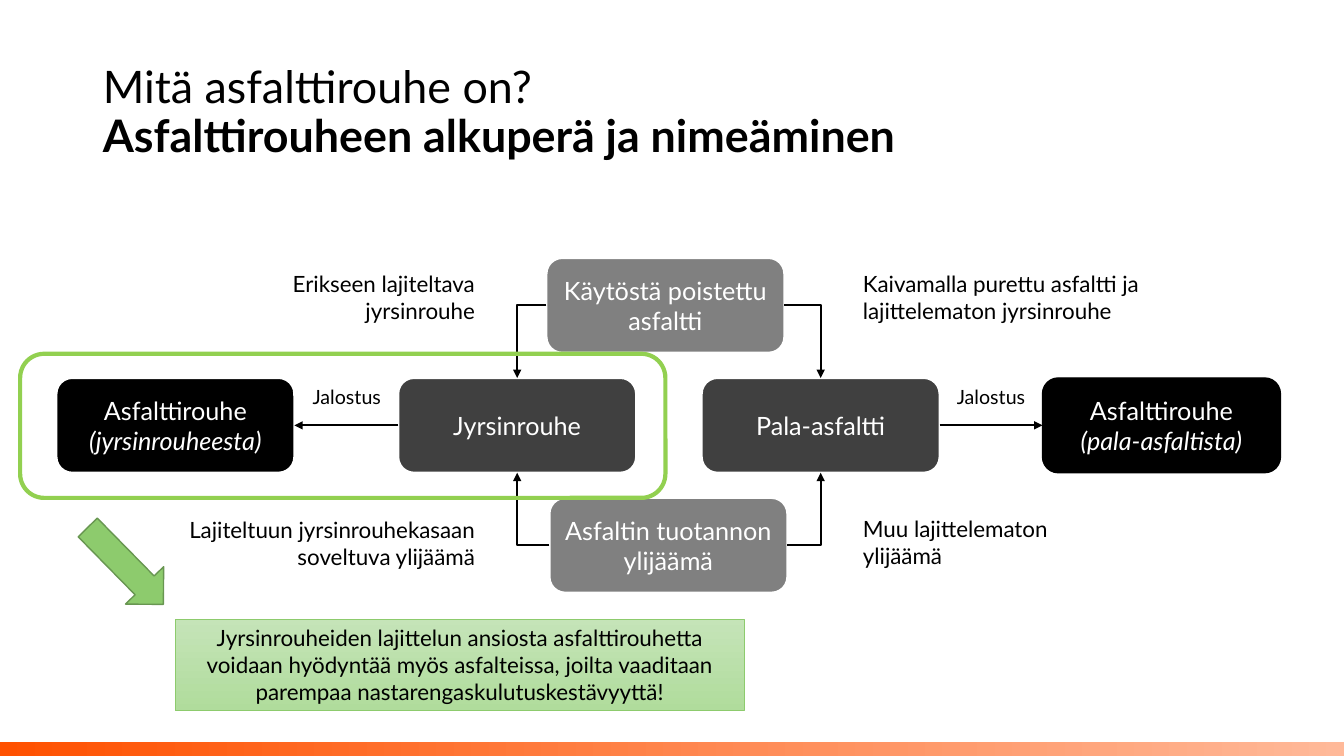
from lxml.etree import SubElement
from pptx import Presentation
from pptx.dml.color import RGBColor
from pptx.enum.shapes import MSO_CONNECTOR, MSO_SHAPE
from pptx.enum.text import MSO_ANCHOR, MSO_AUTO_SIZE, PP_ALIGN
from pptx.oxml.ns import qn
from pptx.util import Inches, Pt

FONT = "Lato"
BLACK, WHITE, DARK, GRAY = "000000", "FFFFFF", "404040", "808080"
BOX_W, BOX_H = 2.36, 0.94
MIDDLE_TOP = 3.75
MIDDLE_Y = MIDDLE_TOP + BOX_H / 2


def color(hex_value):
    return RGBColor.from_string(hex_value)


def write(frame, lines, size, text_color=BLACK, align=PP_ALIGN.LEFT):
    frame.word_wrap = True
    frame.text = "\n".join(lines)
    for paragraph in frame.paragraphs:
        paragraph.alignment = align
        paragraph.font.size = Pt(size)
        paragraph.font.name = FONT
        paragraph.font.color.rgb = color(text_color)


def add_shape(slide, kind, area, fill=None, line=None, width=1.5):
    shape = slide.shapes.add_shape(kind, *map(Inches, area))
    shape.shadow.inherit = False
    if fill is None:
        shape.fill.background()
    elif isinstance(fill, str):
        shape.fill.solid()
        shape.fill.fore_color.rgb = color(fill)
    else:
        *stop_colors, angle = fill
        shape.fill.gradient()
        shape.fill.gradient_angle = angle
        for stop, stop_color in zip(shape.fill.gradient_stops, stop_colors):
            stop.color.rgb = color(stop_color)
    if line:
        shape.line.color.rgb = color(line)
        shape.line.width = Pt(width)
    else:
        shape.line.fill.background()
    return shape


def add_box(slide, left, top, lines, fill, line=WHITE, width=1.5):
    box = add_shape(slide, MSO_SHAPE.ROUNDED_RECTANGLE,
                    (left, top, BOX_W, BOX_H), fill, line, width)
    write(box.text_frame, lines, 18, WHITE, PP_ALIGN.CENTER)
    for detail in box.text_frame.paragraphs[1:]:
        detail.font.italic = True


def add_label(slide, area, lines, size=16, align=PP_ALIGN.LEFT):
    label = slide.shapes.add_textbox(*map(Inches, area))
    write(label.text_frame, lines, size, align=align)
    label.text_frame.auto_size = MSO_AUTO_SIZE.SHAPE_TO_FIT_TEXT


def add_arrow(slide, start, end):
    """Straight on one level, otherwise sideways and then up or down."""
    bent = start[1] != end[1]
    kind = MSO_CONNECTOR.ELBOW if bent else MSO_CONNECTOR.STRAIGHT
    arrow = slide.shapes.add_connector(kind, *map(Inches, (*start, *end)))
    arrow.line.color.rgb = color(BLACK)
    arrow.line.width = Pt(1.5)
    properties = arrow._element.spPr
    if bent:
        properties.find(qn("a:prstGeom")).set("prst", "bentConnector2")
    SubElement(properties.find(qn("a:ln")), qn("a:tailEnd"), type="triangle")
    SubElement(properties, qn("a:effectLst"))


def add_title(slide):
    title = slide.shapes.title
    title.left, title.top, title.width, title.height = map(
        Inches, (0.92, 0.4, 10.77, 1.45))
    frame = title.text_frame
    write(frame, ["Mitä asfalttirouhe on?\v"], 32)
    frame.auto_size = MSO_AUTO_SIZE.NONE
    frame.vertical_anchor = MSO_ANCHOR.MIDDLE
    heading = frame.paragraphs[0]
    heading.line_spacing = 0.9
    topic = heading.add_run()
    topic.text = "Asfalttirouheen alkuperä ja nimeäminen"
    topic.font.bold = True


def main():
    prs = Presentation()
    prs.slide_width, prs.slide_height = Inches(13.33), Inches(7.5)
    slide = prs.slides.add_slide(prs.slide_layouts[5])

    # Footer band and title
    add_shape(slide, MSO_SHAPE.RECTANGLE, (0, 7.36, 13.33, 0.14),
              ("FF5100", "FFB999", 0))
    add_title(slide)

    # Sources, intermediate materials and products
    discarded, surplus = (5.42, 2.56), (5.45, 4.94)
    milled, lumps = 3.95, 6.96
    milled_product, lump_product = 0.56, 10.34
    add_box(slide, *discarded, ["Käytöstä poistettu asfaltti"], GRAY)
    add_box(slide, *surplus, ["Asfaltin tuotannon ylijäämä"], GRAY)
    add_box(slide, lumps, MIDDLE_TOP, ["Pala-asfaltti"], DARK)
    add_box(slide, milled, MIDDLE_TOP, ["Jyrsinrouhe"], DARK)
    add_box(slide, lump_product, MIDDLE_TOP,
            ["Asfalttirouhe", "(pala-asfaltista)"], BLACK, BLACK, 1)
    add_box(slide, milled_product, MIDDLE_TOP,
            ["Asfalttirouhe", "(jyrsinrouheesta)"], BLACK)

    # Arrows from sources to materials
    for (left, top), target_y in ((discarded, MIDDLE_TOP),
                                  (surplus, MIDDLE_TOP + BOX_H)):
        for edge, material in ((left, milled), (left + BOX_W, lumps)):
            add_arrow(slide, (edge, top + BOX_H / 2),
                      (material + BOX_W / 2, target_y))

    # Arrows from materials to products
    add_arrow(slide, (lumps + BOX_W, MIDDLE_Y), (lump_product, MIDDLE_Y))
    add_arrow(slide, (milled, MIDDLE_Y), (milled_product + BOX_W, MIDDLE_Y))
    for left in (2.92, 9.31):
        add_label(slide, (left, 3.77, 1.04, 0.34), ["Jalostus"], 14,
                  PP_ALIGN.CENTER)

    # Explanations beside the arrows
    add_label(slide, (8.46, 2.63, 3.38, 0.64),
              ["Kaivamalla purettu asfaltti ja", "lajittelematon jyrsinrouhe"])
    add_label(slide, (8.46, 5.06, 2.28, 0.64), ["Muu lajittelematon ylijäämä"])
    add_label(slide, (1.43, 5.07, 3.38, 0.64),
              ["Lajiteltuun jyrsinrouhekasaan soveltuva ylijäämä"],
              align=PP_ALIGN.RIGHT)
    add_label(slide, (2.55, 2.63, 2.26, 0.64),
              ["Erikseen lajiteltava jyrsinrouhe"], align=PP_ALIGN.RIGHT)

    # Highlighted route and its conclusion
    add_shape(slide, MSO_SHAPE.ROUNDED_RECTANGLE, (0.2, 3.51, 6.4, 1.43),
              line="92D050", width=3)
    pointer = add_shape(slide, MSO_SHAPE.RIGHT_ARROW, (0.71, 5.35, 1.07, 0.53),
                        "8DCB6D", "689651", 1)
    pointer.rotation = 45.5
    conclusion = add_shape(slide, MSO_SHAPE.RECTANGLE, (1.74, 6.14, 5.64, 0.91),
                           ("C5E4B8", "B0DC9C", 270), "8DCB6D", 0.5)
    write(conclusion.text_frame,
          ["Jyrsinrouheiden lajittelun ansiosta asfalttirouhetta voidaan "
           "hyödyntää myös asfalteissa, joilta vaaditaan parempaa "
           "nastarengaskulutuskestävyyttä!"], 16, align=PP_ALIGN.CENTER)
    conclusion.text_frame.vertical_anchor = MSO_ANCHOR.TOP

    prs.save("out.pptx")


if __name__ == "__main__":
    main()
